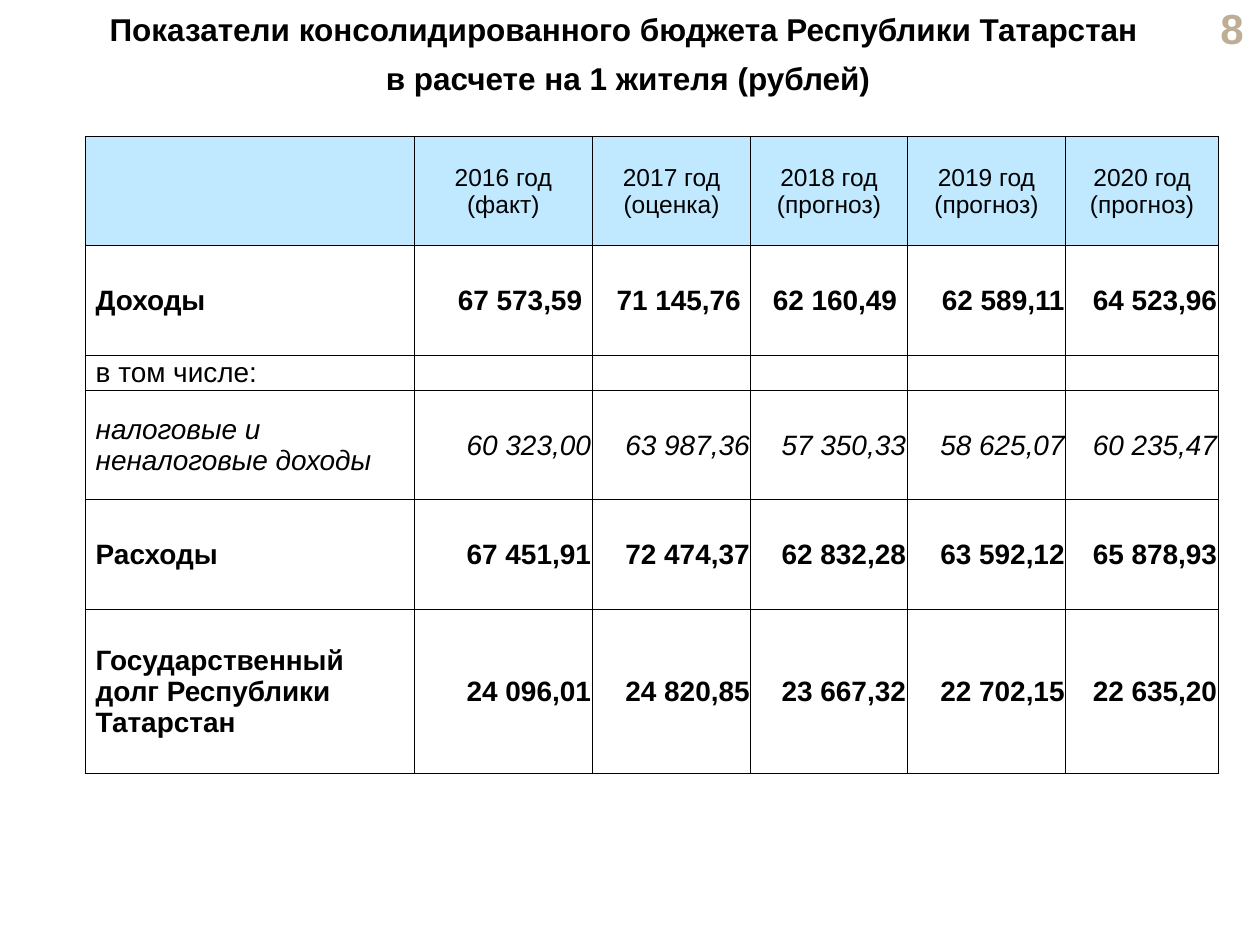
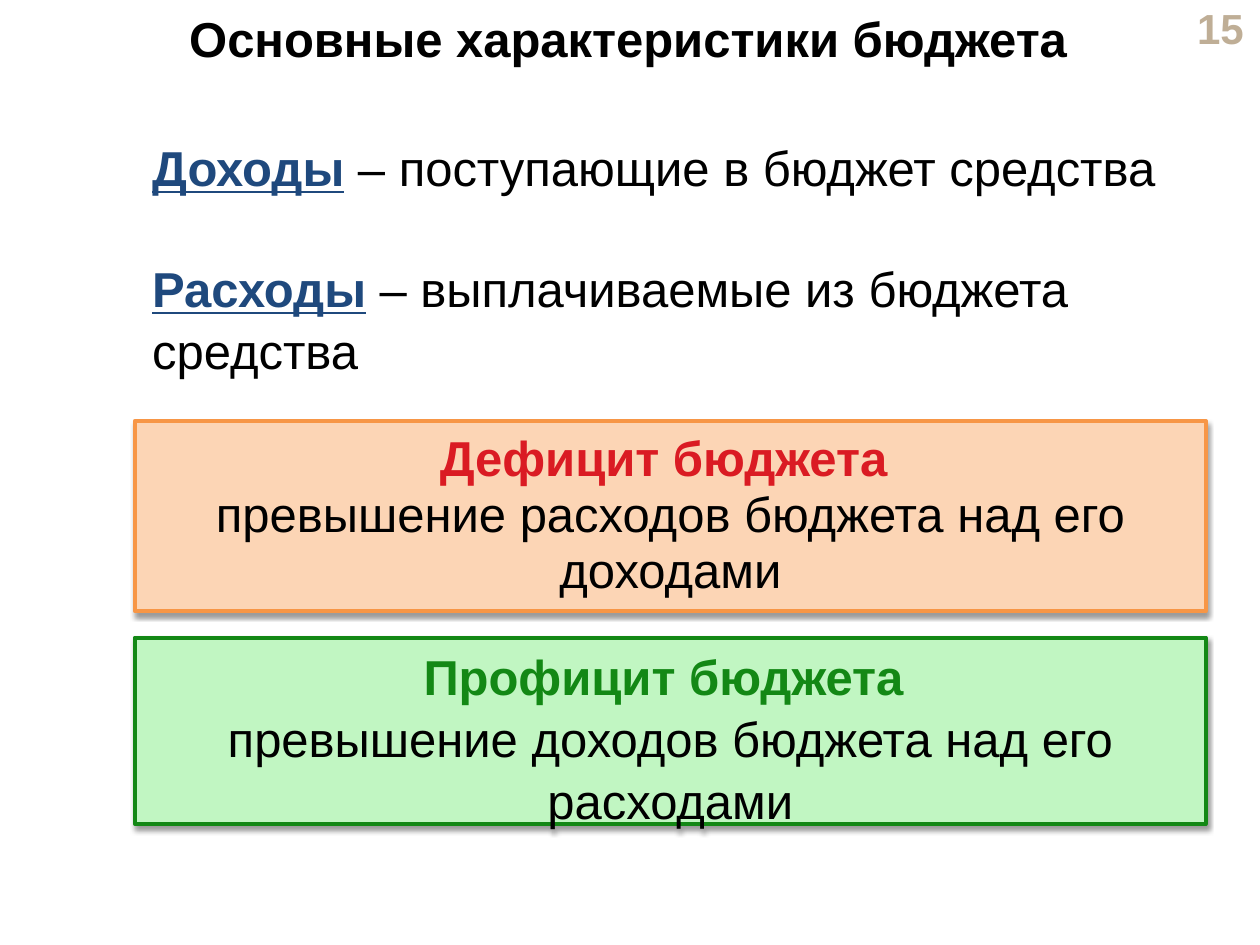
from dataclasses import dataclass

from lxml.etree import SubElement
from pptx import Presentation
from pptx.dml.color import RGBColor
from pptx.enum.shapes import MSO_SHAPE as Shape
from pptx.enum.text import MSO_ANCHOR as Anchor, PP_ALIGN as Align
from pptx.oxml.ns import qn
from pptx.util import Inches, Pt


@dataclass(frozen=True)
class Theme:
    font: str = "Arial"
    black: str = "000000"
    white: str = "FFFFFF"
    page_number: str = "BFAE96"
    header_fill: str = "C0E9FF"
    term: str = "1F497D"
    deficit: str = "DA1B23"
    deficit_fill: str = "FCD5B5"
    deficit_line: str = "F79646"
    surplus: str = "138815"
    surplus_fill: str = "C1F6C2"
    large: int = 28
    number: int = 24
    title: int = 18
    body: int = 16
    header: int = 14


THEME = Theme()
TITLE_BOX = (0.56, 0.05, 8.85, 0.67)
NUMBER_BOX = (9.11, 0.05, 0.86, 0.34)
TABLE_BOX = (0.68, 1.08)
TERMS_BOX = (1.11, 1.02, 8.5, 1.99)
DEFICIT_BOX = (1.07, 3.34, 8.5, 1.51)
SURPLUS_BOX = (1.07, 5.06, 8.5, 1.48)

COLUMN_WIDTHS = (2.61, 1.41, 1.26, 1.24, 1.26, 1.21)
HEADER_HEIGHT = 0.87
HEADINGS = ("", "2016 год (факт)", "2017 год (оценка)", "2018 год (прогноз)",
            "2019 год (прогноз)", "2020 год (прогноз)")
# Each row: height, font format, cell texts
BUDGET_ROWS = (
    (0.87, {"bold": True},
     ("Доходы", "67 573,59", "71 145,76", "62 160,49", "62 589,11", "64 523,96")),
    (0.25, {}, ("в том числе:", "", "", "", "", "")),
    (0.87, {"italic": True},
     ("налоговые и неналоговые доходы",
      "60 323,00", "63 987,36", "57 350,33", "58 625,07", "60 235,47")),
    (0.87, {"bold": True},
     ("Расходы", "67 451,91", "72 474,37", "62 832,28", "63 592,12", "65 878,93")),
    (1.3, {"bold": True},
     ("Государственный долг Республики Татарстан",
      "24 096,01", "24 820,85", "23 667,32", "22 702,15", "22 635,20")),
)


def rgb(value):
    return RGBColor.from_string(value)


def inches(box):
    return [Inches(length) for length in box]


def write(para, text, *, size, color=THEME.black, bold=False, italic=False,
          underline=False, align=None, spacing=None, before=None):
    """Add one formatted span to a paragraph."""
    span = para.add_run()
    span.text = text
    font = span.font
    font.name, font.size = THEME.font, Pt(size)
    font.bold, font.italic, font.underline = bold, italic, underline
    font.color.rgb = rgb(color)
    if align is not None:
        para.alignment = align
    if spacing is not None:
        para.line_spacing = spacing
    if before is not None:
        para.space_before = Pt(before)


def add_text_box(page, box, anchor=Anchor.TOP):
    frame = page.shapes.add_textbox(*inches(box)).text_frame
    frame.word_wrap = True
    frame.vertical_anchor = anchor
    return frame


def add_page(deck, number, title_lines, title_size):
    """Blank page with the shared page number and title."""
    page = deck.slides.add_slide(deck.slide_layouts[6])
    frame = add_text_box(page, NUMBER_BOX, Anchor.MIDDLE)
    write(frame.paragraphs[0], str(number), size=THEME.number,
          color=THEME.page_number, bold=True, align=Align.RIGHT)
    frame = add_text_box(page, TITLE_BOX)
    for index, line in enumerate(title_lines):
        para = frame.add_paragraph() if index else frame.paragraphs[0]
        write(para, line, size=title_size, bold=True, align=Align.CENTER,
              spacing=0.95, before=7.5 if index else None)
    return page


def style_cell(cell, fill, side_inset):
    cell.vertical_anchor = Anchor.MIDDLE
    cell.margin_left = cell.margin_right = Inches(side_inset)
    cell.margin_top, cell.margin_bottom = Inches(0.01), 0
    properties = cell._tc.get_or_add_tcPr()
    for side in ("a:lnL", "a:lnR", "a:lnT", "a:lnB"):
        line = SubElement(properties, qn(side), w=str(Pt(0.5)))
        paint = SubElement(line, qn("a:solidFill"))
        SubElement(paint, qn("a:srgbClr"), val=THEME.black)
    cell.fill.solid()
    cell.fill.fore_color.rgb = rgb(fill)


def fill_cell(cell, text, **style):
    para = cell.text_frame.paragraphs[0]
    if text:
        write(para, text, **style)
    else:
        # Keeps empty cells from stretching their row
        SubElement(para._p, qn("a:endParaRPr"), sz=str(Pt(THEME.header).centipoints))


def add_budget_table(page, box):
    left, top = box
    heights = [HEADER_HEIGHT] + [row[0] for row in BUDGET_ROWS]
    size = (sum(COLUMN_WIDTHS), sum(heights))
    table = page.shapes.add_table(len(heights), len(COLUMN_WIDTHS),
                                  *inches((left, top, *size))).table
    table.first_row = table.horz_banding = False
    for column, width in zip(table.columns, COLUMN_WIDTHS):
        column.width = Inches(width)
    for row, height in zip(table.rows, heights):
        row.height = Inches(height)

    # Header row
    for column, heading in enumerate(HEADINGS):
        cell = table.cell(0, column)
        style_cell(cell, THEME.header_fill, 0.08)
        fill_cell(cell, heading, size=THEME.header, align=Align.CENTER)

    # Labels on the left, amounts on the right
    for row, (_, style, texts) in enumerate(BUDGET_ROWS, 1):
        for column, text in enumerate(texts):
            cell = table.cell(row, column)
            is_wide = column == 0 or (row == 1 and column < 4)
            style_cell(cell, THEME.white, 0.08 if is_wide else 0.01)
            fill_cell(cell, text, size=THEME.body,
                      align=Align.RIGHT if column else Align.LEFT, **style)


def add_terms(page, box):
    frame = add_text_box(page, box)
    terms = (("Доходы", " – поступающие в бюджет средства"),
             ("Расходы", " – выплачиваемые из бюджета средства"))
    for index, (term, meaning) in enumerate(terms):
        para = frame.add_paragraph() if index else frame.paragraphs[0]
        write(para, term, size=THEME.large, color=THEME.term, bold=True,
              underline=True, spacing=1.05, before=34 if index else None)
        write(para, meaning, size=THEME.large)


def add_shadow(shape):
    effects = shape._element.spPr.find(qn("a:effectLst"))
    shadow = SubElement(effects, qn("a:outerShdw"), blurRad=str(Pt(3.1)),
                        dist=str(Pt(1.6)), dir="5400000", rotWithShape="0")
    color = SubElement(shadow, qn("a:srgbClr"), val=THEME.black)
    SubElement(color, qn("a:alpha"), val="38000")


def add_balance_panel(page, box, term, meaning, *, color, fill, line, anchor, spacing):
    panel = page.shapes.add_shape(Shape.RECTANGLE, *inches(box))
    panel.shadow.inherit = False
    panel.fill.solid()
    panel.fill.fore_color.rgb = rgb(fill)
    panel.line.color.rgb = rgb(line)
    panel.line.width = Pt(2.25)
    add_shadow(panel)
    frame = panel.text_frame
    frame.word_wrap = True
    frame.vertical_anchor = anchor
    para = frame.paragraphs[0]
    write(para, term + " ", size=THEME.large, color=color, bold=True,
          align=Align.CENTER, spacing=spacing)
    para.add_line_break()
    write(para, meaning, size=THEME.large)


def build_per_resident_page(deck):
    page = add_page(deck, 8, (
        "Показатели консолидированного бюджета Республики Татарстан ",
        "в расчете на 1 жителя (рублей)"), THEME.title)
    add_budget_table(page, TABLE_BOX)


def build_characteristics_page(deck):
    page = add_page(deck, 15, ("Основные характеристики бюджета",), THEME.large)
    add_balance_panel(page, DEFICIT_BOX, "Дефицит бюджета",
                      "превышение расходов бюджета над его доходами",
                      color=THEME.deficit, fill=THEME.deficit_fill,
                      line=THEME.deficit_line, anchor=Anchor.MIDDLE, spacing=0.95)
    add_balance_panel(page, SURPLUS_BOX, "Профицит бюджета",
                      "превышение доходов бюджета над его расходами",
                      color=THEME.surplus, fill=THEME.surplus_fill,
                      line=THEME.surplus, anchor=Anchor.TOP, spacing=1.05)
    add_terms(page, TERMS_BOX)


def main():
    deck = Presentation()
    deck.slide_width, deck.slide_height = Inches(10), Inches(7.5)
    build_per_resident_page(deck)
    build_characteristics_page(deck)
    deck.save("out.pptx")


if __name__ == "__main__":
    main()
